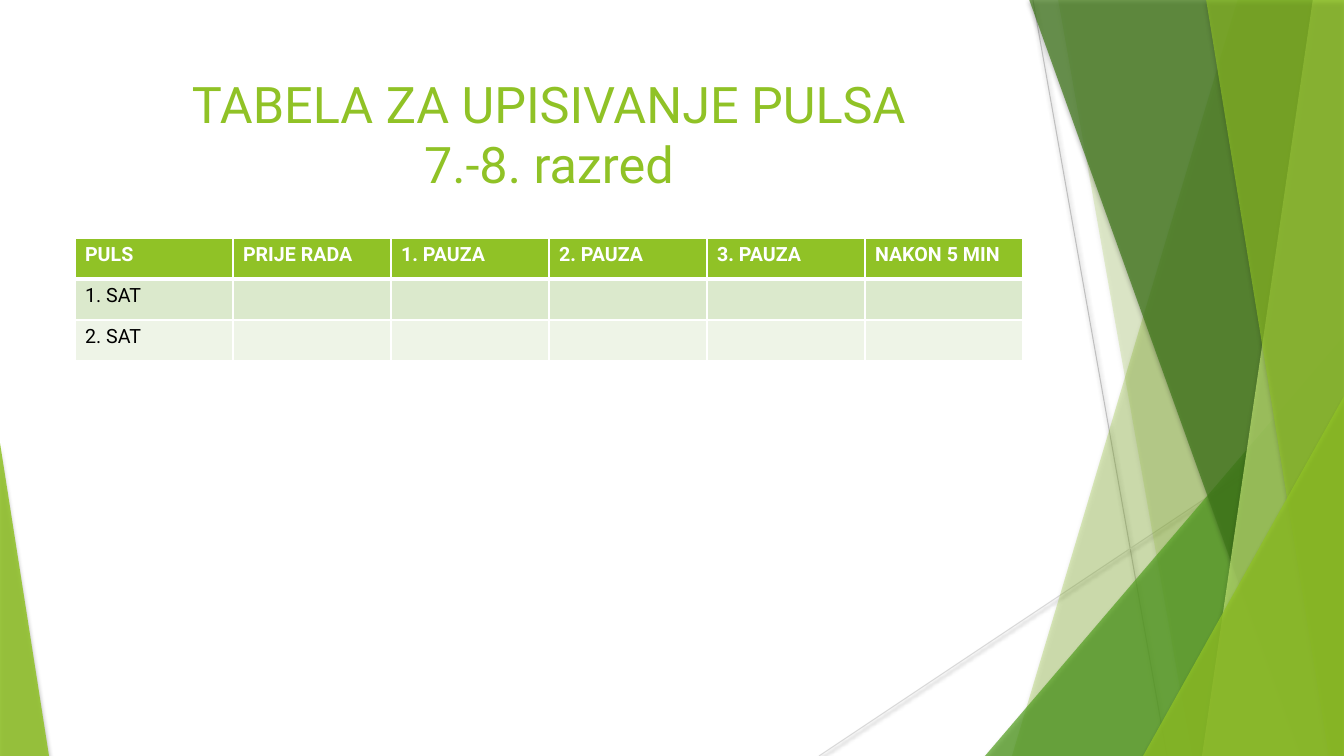
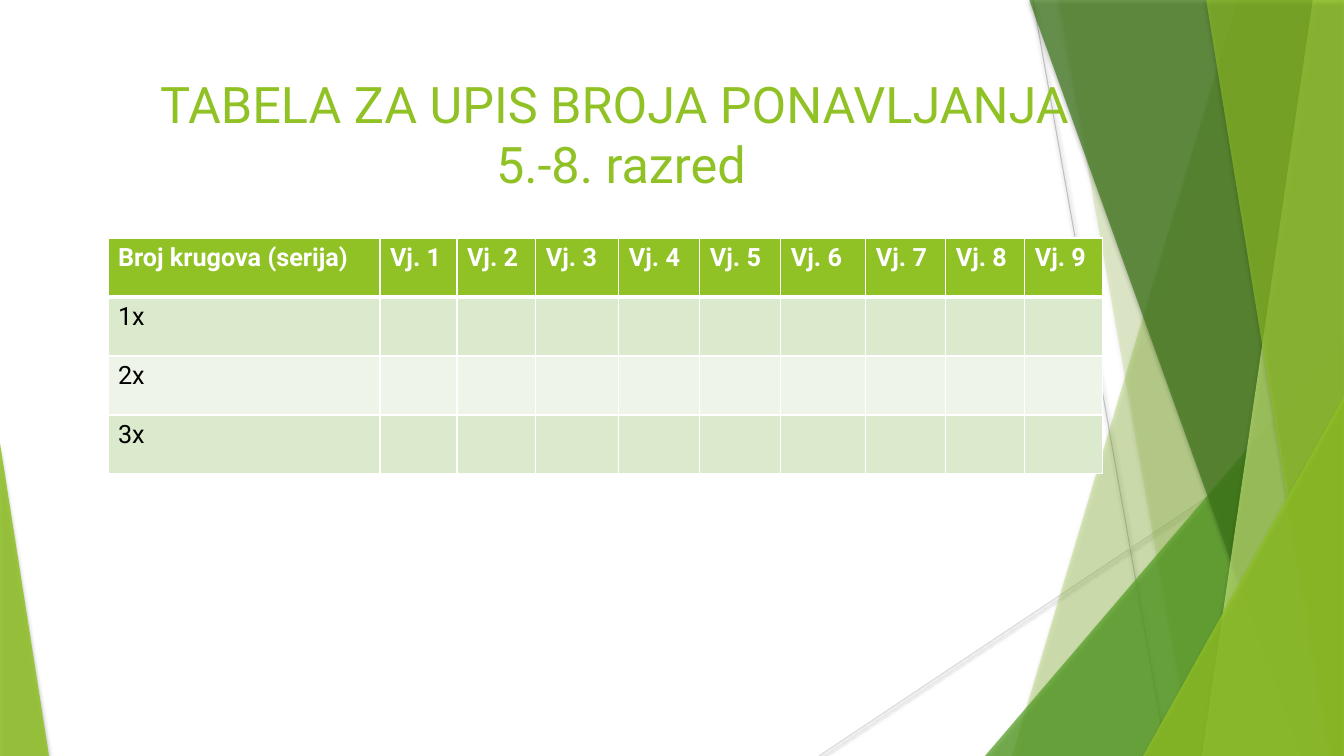
import pptx
import pptx.util
import pptx.dml.color
import pptx.enum.shapes
import pptx.enum.text
import pptx.oxml
import pptx.oxml.ns
import pptx.text.text

RGB = pptx.dml.color.RGBColor
LIME = RGB(0x90, 0xC2, 0x26)
GREEN = RGB(0x54, 0xA0, 0x21)
DARK = RGB(0x3F, 0x78, 0x19)
PALE = RGB(0xC0, 0xE4, 0x74)
BAND = RGB(0xDB, 0xE9, 0xCC)
MIST = RGB(0xEE, 0xF4, 0xE7)
GREY = RGB(0xBF, 0xBF, 0xBF)
SILVER = RGB(0xD9, 0xD9, 0xD9)
WHITE = RGB(0xFF, 0xFF, 0xFF)
BLACK = RGB(0x00, 0x00, 0x00)

WIDE, HIGH = 1344, 756
SCALE = 914400 / 100.8
FONT = "Roboto"

LINES = [(1033, 0, 1167, HIGH, GREY), (WIDE, 406, 819, HIGH, SILVER)]
DECOR = [
    ("band", (1238, 1012), LIME, 30),
    ("band", (1058, 1192), LIME, 20),
    ("wedge", (985, 336, 359, 420, 1), GREEN, 72),
    ("band", (1029, 1301), DARK, 70),
    ("band", (1313, 1202), PALE, 70),
    ("band", (1206, 1329), LIME, 65),
    ("wedge", (1143, 396, 201, 360, 1), LIME, 80),
    ("wedge", (0, 443, 49, 313, 0), LIME, 85),
]

SLIDES = [
    {
        "title": ["TABELA ZA UPISIVANJE PULSA", "7.-8. razred"],
        "box": (75, 68, 948, 145),
        "left": 75, "cols": [158] * 6, "row": 41, "size": 14,
        "head": ["PULS", "PRIJE RADA", "1. PAUZA", "2. PAUZA", "3. PAUZA", "NAKON 5 MIN"],
        "side": ["1. SAT", "2. SAT"],
    },
    {
        "title": ["TABELA ZA UPIS BROJA PONAVLJANJA ", "5.-8. razred"],
        "box": (131, 68, 980, 145),
        "left": 108, "cols": [272, 77, 79, 83, 81, 81, 85, 80, 79, 78], "row": 59, "size": 18,
        "head": ["Broj krugova (serija)"] + [f"Vj. {n}" for n in range(1, 10)],
        "side": ["1x", "2x", "3x"],
    },
]
TOP = 238


def px(*nums):
    return [pptx.util.Emu(round(n * SCALE)) for n in nums]


def put(item, form):
    for key, val in form.items():
        setattr(item, key, val)


def style(font, size, tint, bold=False):
    put(font, {"name": FONT, "size": pptx.util.Pt(size), "bold": bold})
    font.fill.solid()
    font.fill.fore_color.rgb = tint


def node(text):
    return pptx.oxml.parse_xml(text.replace(">", " " + pptx.oxml.ns.nsdecls("a") + ">", 1))


def shade(shape, blur, dist, alpha):
    props = shape.element.spPr
    for old in props.xpath("a:effectLst"):
        props.remove(old)
    props.append(node(
        f'<a:effectLst><a:outerShdw blurRad="{blur}" dist="{dist}" dir="5400000" rotWithShape="0">'
        f'<a:srgbClr val="000000"><a:alpha val="{alpha}000"/></a:srgbClr></a:outerShdw></a:effectLst>'))


def rule(shapes, x1, y1, x2, y2, tint):
    line = shapes.add_connector(pptx.enum.shapes.MSO_CONNECTOR.STRAIGHT, *px(x1, y1, x2, y2))
    line.line.width = pptx.util.Pt(0.75)
    line.line.color.rgb = tint
    shade(line, 39000, 20000, 38)
    return line


def band(shapes, top, foot):
    form = shapes.build_freeform(top, -1, scale=SCALE)
    form.add_line_segments([(WIDE, -1), (WIDE, HIGH), (foot, HIGH)], close=True)
    return form.convert_to_shape()


def wedge(shapes, left, top, wide, high, peak):
    kind = pptx.enum.shapes.MSO_SHAPE.ISOSCELES_TRIANGLE
    shape = shapes.add_shape(kind, *px(left, top, wide, high))
    shape.adjustments[0] = peak
    return shape


def facet(shapes, kind, nums, tint, alpha):
    shape = {"band": band, "wedge": wedge}[kind](shapes, *nums)
    shape.fill.solid()
    shape.fill.fore_color.rgb = tint
    shape.element.spPr.xpath("a:solidFill/a:srgbClr")[0].append(node(f'<a:alpha val="{alpha}000"></a:alpha>'))
    shape.line.fill.background()
    shade(shape, 38100, 25400, 35)
    return shape


def adorn(slide, layout):
    parts = [rule(slide.shapes, *row) for row in LINES]
    parts += [facet(slide.shapes, *row) for row in DECOR]
    for n, part in enumerate(parts):
        part.element.xpath(".//p:cNvPr")[0].set("id", str(20 + n))
        layout.shapes.element.insert(2 + n, part.element)


def edge(cell, sides):
    props = cell._tc.get_or_add_tcPr()
    for n, (side, size) in enumerate(sides.items()):
        props.insert(n, node(
            f'<a:ln{side} w="{round(size * 12700)}"><a:solidFill><a:srgbClr val="{WHITE}"/>'
            f'</a:solidFill></a:ln{side}>'))


def grid(slide, data):
    cols, rows = data["cols"], len(data["side"]) + 1
    frame = slide.shapes.add_table(
        rows, len(cols), *px(data["left"], TOP, sum(cols), rows * data["row"]))
    table = frame.table
    for col, wide in zip(table.columns, cols):
        col.width = px(wide)[0]
    blank = [""] * (len(cols) - 1)
    texts = [data["head"]] + [[name] + blank for name in data["side"]]
    for r, words in enumerate(texts):
        table.rows[r].height = px(data["row"])[0]
        fill = LIME if r == 0 else (MIST, BAND)[r % 2]
        for c, word in enumerate(words):
            cell = table.cell(r, c)
            cell.fill.solid()
            cell.fill.fore_color.rgb = fill
            edge(cell, {"L": 0.96, "R": 0.96, "T": 3 if r == 1 else 0.96, "B": 3 if r == 0 else 0.96})
            if word:
                run = cell.text_frame.paragraphs[0].add_run()
                run.text = word
                style(run.font, data["size"], WHITE if r == 0 else BLACK, r == 0)


def head(slide, data):
    title = slide.shapes.title
    put(title, dict(zip(("left", "top", "width", "height"), px(*data["box"]))))
    put(title.text_frame, {
        "word_wrap": True,
        "auto_size": pptx.enum.text.MSO_AUTO_SIZE.NONE,
        "vertical_anchor": pptx.enum.text.MSO_ANCHOR.TOP,
    })
    para = title.text_frame.paragraphs[0]
    para.alignment = pptx.enum.text.PP_ALIGN.CENTER
    for n, line in enumerate(data["title"]):
        if n:
            para.add_line_break()
        para.add_run().text = line


def main():
    deck = pptx.Presentation()
    put(deck, dict(zip(("slide_width", "slide_height"), px(WIDE, HIGH))))
    base = deck.slide_master.element.xpath(".//p:titleStyle/a:lvl1pPr/a:defRPr")[0]
    style(pptx.text.text.Font(base), 36, LIME)
    layout = deck.slide_layouts.get_by_name("Title Only")
    for n, data in enumerate(SLIDES):
        slide = deck.slides.add_slide(layout)
        if n == 0:
            adorn(slide, layout)
        head(slide, data)
        grid(slide, data)
    deck.save("out.pptx")


if __name__ == "__main__":
    main()
